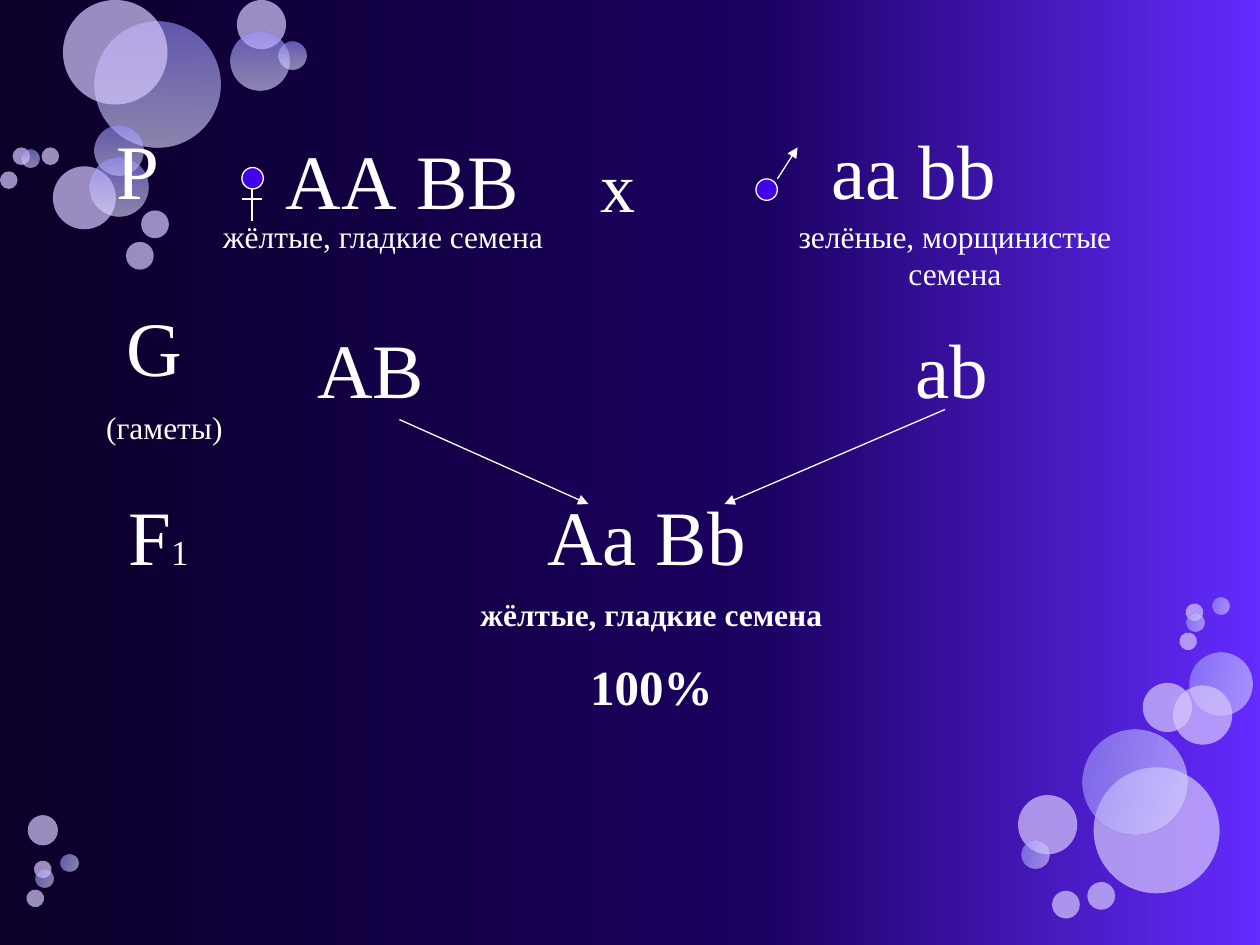
from lxml.etree import SubElement
from pptx import Presentation
from pptx.dml.color import RGBColor
from pptx.enum.shapes import MSO_CONNECTOR as Connector, MSO_SHAPE as Shape
from pptx.enum.text import MSO_AUTO_SIZE as AutoSize, PP_ALIGN as Align
from pptx.oxml.ns import qn
from pptx.util import Emu, Pt

SCALE = 9144
FONT = "Times New Roman"
WHITE, GENDER_FILL, BUBBLE = "FFFFFF", "4203E7", "D7C8FE"
BACKDROP = [(0, "0B0029"), (60, "1A005F"), (100, "652BFF")]
BUBBLE_SHADES = [(0, "9890FF"), (50, "BFBBFF"), (100, "E0DEFF")]

TOP_LEFT = [
    (75, 17, 100, True), (42, 132, 50, False), (75, 100, 39, True),
    (71, 125, 47, True), (50, 0, 83, False), (188, 0, 39, False),
    (183, 25, 47, True), (221, 33, 22, True), (112, 167, 22, False),
    (10, 117, 14, False), (100, 192, 22, False), (0, 136, 14, False),
    (17, 119, 14, True), (33, 117, 14, False),
]
BOTTOM_RIGHT = [
    (60, 135, 100, False), (136, 44, 50, True), (99, 68, 39, False),
    (123, 70, 47, False), (51, 105, 83, True), (0, 157, 47, False),
    (3, 193, 22, True), (27, 233, 22, False), (133, 5, 14, False),
    (55, 226, 22, False), (154, 0, 14, True), (134, 13, 14, True),
    (128, 28, 14, False),
]
BOTTOM_LEFT = [
    (1, 0, 24, False), (6, 36, 14, False), (27, 31, 14, True),
    (7, 43, 14, True), (0, 59, 14, False),
]


def px(value):
    """Turn a length in px into EMU."""
    return Emu(value * SCALE)


def color(hex_string):
    """Return the colour for a hex string."""
    return RGBColor.from_string(hex_string)


def set_alpha(element, percent):
    """Set the opacity of every colour below an element."""
    for tone in element.iter(qn("a:srgbClr")):
        SubElement(tone, qn("a:alpha")).set("val", str(percent * 1000))


def set_gradient(fill, owner, stops, angle):
    """Give a fill a linear gradient and return its list of stops."""
    fill.gradient()
    fill.gradient_angle = angle
    stop_list = owner.find(".//" + qn("a:gsLst"))
    for old_stop in list(stop_list):
        stop_list.remove(old_stop)
    for position, tone in stops:
        stop = SubElement(stop_list, qn("a:gs"))
        stop.set("pos", str(position * 1000))
        SubElement(stop, qn("a:srgbClr")).set("val", tone)
    return stop_list


def add_circle(slide, left, top, diameter):
    """Add a circle without a shadow."""
    circle = slide.shapes.add_shape(
        Shape.OVAL, px(left), px(top), px(diameter), px(diameter))
    circle.shadow.inherit = False
    return circle


def add_bubbles(slide, left, top, bubbles, turned=False):
    """Add a cluster of translucent bubbles."""
    for dx, dy, diameter, shaded in bubbles:
        bubble = add_circle(slide, left + dx, top + dy, diameter)
        bubble.line.fill.background()
        if shaded:
            stops = set_gradient(bubble.fill, bubble.element, BUBBLE_SHADES, 270)
            set_alpha(stops, 60)
        else:
            bubble.fill.solid()
            bubble.fill.fore_color.rgb = color(BUBBLE)
            set_alpha(bubble.element.spPr, 70)
        if turned:
            bubble.rotation = 103.3
            bubble.element.spPr.find(qn("a:xfrm")).set("flipV", "1")


def add_line(slide, x1, y1, x2, y2, arrow=False):
    """Add a thin white line, with an arrowhead at its end if wanted."""
    line = slide.shapes.add_connector(
        Connector.STRAIGHT, px(x1), px(y1), px(x2), px(y2))
    line.line.color.rgb = color(WHITE)
    line.line.width = Pt(0.75)
    if arrow:
        outline = line.element.spPr.find(qn("a:ln"))
        SubElement(outline, qn("a:tailEnd")).set("type", "triangle")
    SubElement(line.element.spPr, qn("a:effectLst"))


def add_text(slide, left, top, width, height, *lines, centered=False, bold=False):
    """Add a text box with one paragraph for each (text, size) line."""
    box = slide.shapes.add_textbox(px(left), px(top), px(width), px(height))
    frame = box.text_frame
    frame.word_wrap = True
    frame.auto_size = AutoSize.SHAPE_TO_FIT_TEXT
    for index, (text, size) in enumerate(lines):
        paragraph = frame.add_paragraph() if index else frame.paragraphs[0]
        paragraph.add_run().text = text
        paragraph.alignment = Align.CENTER if centered else Align.LEFT
        paragraph.space_before = Pt(size * 0.5)
        font = paragraph.font
        font.name, font.size, font.bold = FONT, Pt(size), bold
        font.color.rgb = color(WHITE)
    return frame


def add_gender_circle(slide, left, top):
    """Add the ring that both gender signs share."""
    ring = add_circle(slide, left, top, 17)
    ring.fill.solid()
    ring.fill.fore_color.rgb = color(GENDER_FILL)
    ring.line.color.rgb = color(WHITE)
    ring.line.width = Pt(0.75)


def add_female_sign(slide, left, top):
    """Add the sign of the mother plant."""
    add_gender_circle(slide, left, top)
    add_line(slide, left + 8, top + 17, left + 8, top + 42)
    add_line(slide, left, top + 25, left + 16, top + 25)


def add_male_sign(slide, left, top):
    """Add the sign of the father plant."""
    add_gender_circle(slide, left, top + 25)
    add_line(slide, left + 17, top + 25, left + 33, top, arrow=True)


def add_parents(slide, left, top):
    """Add the row of parent genotypes and phenotypes."""
    add_text(slide, left, top, 75, 83, ("Р", 44))
    add_female_sign(slide, left + 109, top + 41)
    add_text(slide, left + 134, top + 8, 225, 83, ("АА ВВ", 44))
    add_male_sign(slide, left + 517, top + 25)
    add_text(slide, left + 567, top, 217, 83, ("аа bb", 44))
    add_text(slide, left + 384, top + 16, 67, 77, ("х", 40))
    add_text(slide, left + 75, top + 75, 292, 40,
             ("жёлтые, гладкие семена", 18), centered=True)
    add_text(slide, left + 525, top + 75, 300, 70,
             ("зелёные, морщинистые семена", 18), centered=True)


def add_gametes(slide, left, top):
    """Add the row of gametes and the arrows that join them."""
    add_text(slide, left, top, 145, 134, ("G ", 44), ("(гаметы)", 18), centered=True)
    add_text(slide, left + 184, top + 17, 108, 83, ("АВ", 44))
    add_text(slide, left + 659, top + 17, 92, 83, ("аb", 44))
    add_line(slide, left + 259, top + 100, left + 409, top + 167, arrow=True)
    add_line(slide, left + 692, top + 92, left + 517, top + 167, arrow=True)


def add_offspring(slide, left, top):
    """Add the row of the first generation."""
    generation = add_text(slide, left, top, 83, 83, ("F", 44))
    number = generation.paragraphs[0].add_run()
    number.text = "1"
    number.font.size = Pt(20)
    add_text(slide, left + 333, top, 217, 83, ("Аа Bb", 44))
    add_text(slide, left + 225, top + 84, 400, 110,
             ("жёлтые, гладкие семена", 18), ("100%", 28),
             centered=True, bold=True)


def main():
    """Build and save the slide of the dihybrid cross."""
    presentation = Presentation()
    presentation.slide_width, presentation.slide_height = px(1000), px(750)
    slide = presentation.slides.add_slide(presentation.slide_layouts[6])
    set_gradient(slide.background.fill, slide.element, BACKDROP, 0)
    add_bubbles(slide, 0, 0, TOP_LEFT)
    add_bubbles(slide, 808, 474, BOTTOM_RIGHT, turned=True)
    add_bubbles(slide, 21, 647, BOTTOM_LEFT, turned=True)
    add_parents(slide, 83, 92)
    add_gametes(slide, 58, 233)
    add_offspring(slide, 92, 383)
    presentation.save("out.pptx")


if __name__ == "__main__":
    main()
